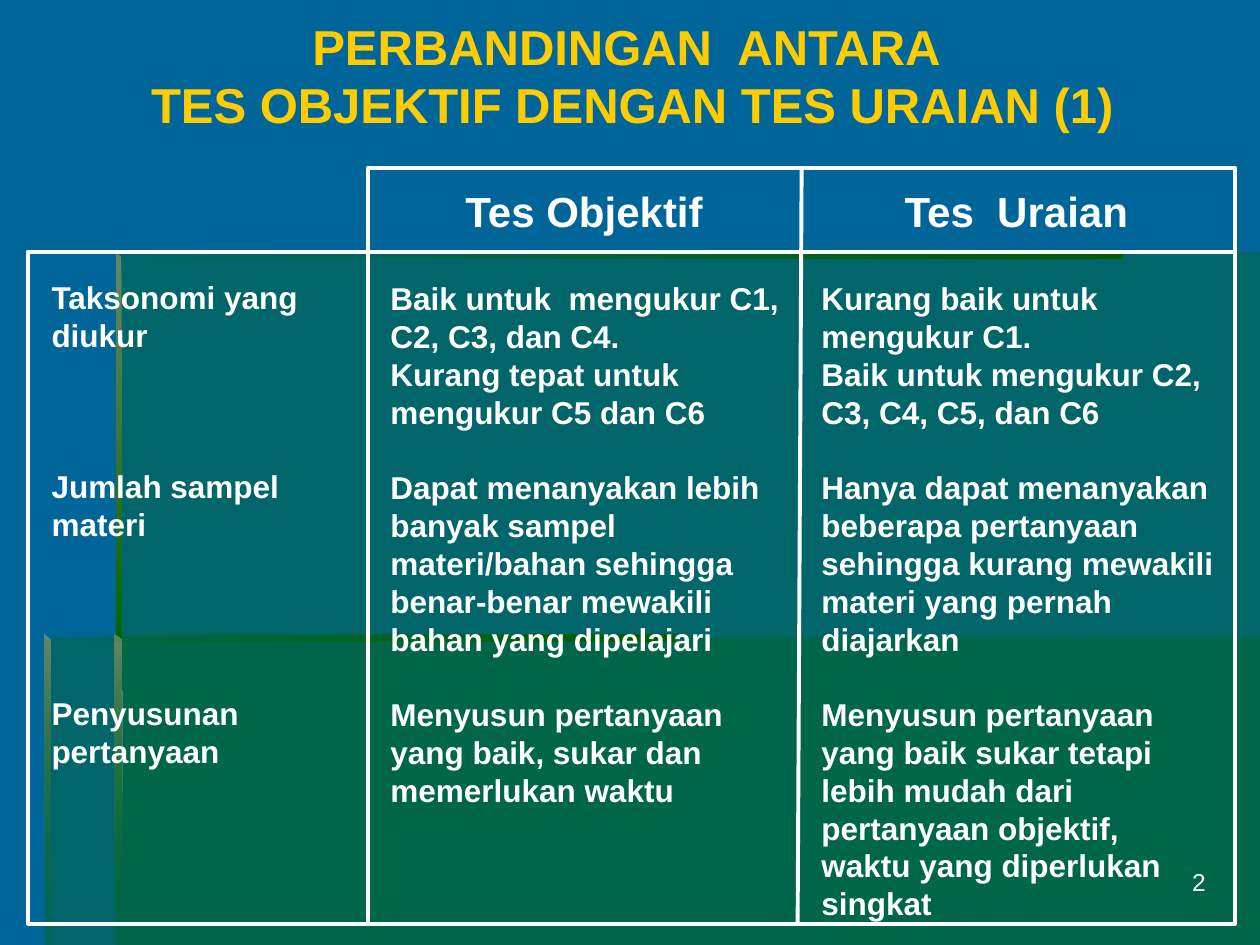
"""Build the slide comparing objective tests with essay tests."""
from dataclasses import dataclass
from typing import Optional

import lxml.etree
import pptx
import pptx.dml.color
import pptx.enum.dml
import pptx.enum.shapes
import pptx.enum.text
import pptx.oxml.ns
import pptx.util
from pptx.util import Cm, Pt

RGBColor = pptx.dml.color.RGBColor
Align = pptx.enum.text.PP_ALIGN
BLUE = RGBColor(0x00, 0x66, 0x99)
GREEN = RGBColor(0x00, 0x66, 0x00)
DARK_GREEN = RGBColor(0x00, 0x5E, 0x00)
GREY_GREEN = RGBColor(0x66, 0x86, 0x66)
YELLOW = RGBColor(0xFF, 0xCC, 0x00)
WHITE = RGBColor(0xFF, 0xFF, 0xFF)
FONT = "Arial"
LINE_FACTOR = 1.2
BORDER = Pt(2.25)
PAGE_RIGHT, PAGE_BOTTOM = 25.4, 19.05
RIGHTWARD, DOWNWARD = 0, 270


@dataclass(frozen=True)
class Tint:
    color: RGBColor
    opacity: int = 100


@dataclass(frozen=True)
class Panel:
    points: list[tuple[float, float]]
    start: Tint
    end: Optional[Tint] = None
    angle: int = RIGHTWARD


@dataclass(frozen=True)
class Frame:
    left: float
    top: float
    width: float
    height: float

    def lengths(self) -> list[pptx.util.Length]:
        return [Cm(value) for value in (self.left, self.top, self.width, self.height)]


@dataclass(frozen=True)
class Entry:
    text: str
    lines_before: int = 0


@dataclass(frozen=True)
class Block:
    frame: Frame
    entries: list[Entry]
    size: int = 18
    align: Align = Align.LEFT
    bold: bool = True
    color: RGBColor = WHITE


PANELS = [
    Panel([(2.34, 12.83), (2.34, PAGE_BOTTOM), (PAGE_RIGHT, PAGE_BOTTOM),
           (PAGE_RIGHT, 12.83)], Tint(GREEN, 30)),
    Panel([(2.39, 12.85), (0.91, 12.85), (0.91, PAGE_BOTTOM), (PAGE_RIGHT, PAGE_BOTTOM),
           (PAGE_RIGHT, 5.08), (2.39, 5.08)], Tint(GREEN, 30)),
    Panel([(2.34, 5.08), (2.34, 5.21), (22.63, 5.21), (22.63, 5.08)],
          Tint(GREEN, 0), Tint(DARK_GREEN)),
    Panel([(2.34, 5.08), (2.34, 12.95), (2.46, 12.95), (2.44, 5.18)],
          Tint(GREY_GREEN), Tint(GREEN), DOWNWARD),
    Panel([(2.31, PAGE_BOTTOM), (2.46, PAGE_BOTTOM), (2.44, 12.9), (2.31, 12.8)],
          Tint(GREY_GREEN), Tint(GREEN, 0), DOWNWARD),
    Panel([(0.89, 12.8), (0.89, 12.93), (13.59, 12.93), (13.59, 12.8)],
          Tint(GREEN, 0), Tint(DARK_GREEN)),
    Panel([(0.89, 12.8), (0.89, PAGE_BOTTOM), (1.02, PAGE_BOTTOM), (1.02, 12.93)],
          Tint(GREY_GREEN), Tint(GREEN, 10), DOWNWARD),
]

TITLE = Block(Frame(0.64, 0.2, 24.21, 2.62),
              [Entry("PERBANDINGAN  ANTARA "), Entry("TES OBJEKTIF DENGAN TES URAIAN (1)")],
              28, Align.CENTER, color=YELLOW)

BLOCKS = [
    Block(Frame(19.28, 17.35, 5.28, 1.32), [Entry("2")], 14, Align.RIGHT, bold=False),
    Block(Frame(7.37, 3.61, 8.81, 1.27), [Entry("Tes Objektif")], 24, Align.CENTER),
    Block(Frame(16.26, 3.61, 8.46, 1.27), [Entry("Tes  Uraian")], 24, Align.CENTER),
    Block(Frame(0.79, 5.49, 6.35, 11.71), [
        Entry("Taksonomi yang diukur"),
        Entry("Jumlah sampel materi", 3),
        Entry("Penyusunan pertanyaan", 4),
    ]),
    Block(Frame(7.62, 5.51, 8.46, 11.71), [
        Entry("Baik untuk  mengukur C1, C2, C3, dan C4."),
        Entry("Kurang tepat untuk mengukur C5 dan C6"),
        Entry("Dapat menanyakan lebih banyak sampel materi/bahan sehingga "
              "benar-benar mewakili bahan yang dipelajari", 1),
        Entry("Menyusun pertanyaan yang baik, sukar dan memerlukan waktu", 1),
    ]),
    Block(Frame(16.31, 5.51, 8.46, 13.23), [
        Entry("Kurang baik untuk mengukur C1."),
        Entry("Baik untuk mengukur C2, C3, C4, C5, dan C6"),
        Entry("Hanya dapat menanyakan beberapa pertanyaan sehingga kurang "
              "mewakili materi yang pernah diajarkan", 1),
        Entry("Menyusun pertanyaan yang baik sukar tetapi lebih mudah dari "
              "pertanyaan objektif, waktu yang diperlukan singkat", 1),
    ]),
]


def draw_panel(page: pptx.slide.Slide, panel: Panel) -> None:
    points = [(Cm(x), Cm(y)) for x, y in panel.points]
    builder = page.shapes.build_freeform(*points[0])
    builder.add_line_segments(points[1:], close=True)
    shape = builder.convert_to_shape()
    shape.shadow.inherit = False
    shape.line.fill.background()
    tints = [panel.start]
    if panel.end is None:
        shape.fill.solid()
        shape.fill.fore_color.rgb = panel.start.color
    else:
        tints.append(panel.end)
        shape.fill.gradient()
        shape.fill.gradient_angle = panel.angle
        for stop, tint in zip(shape.fill.gradient_stops, tints):
            stop.color.rgb = tint.color
    qualify = pptx.oxml.ns.qn
    colors = shape.element.spPr.iter(qualify("a:srgbClr"))
    for color, tint in zip(colors, tints):
        if tint.opacity < 100:
            alpha = lxml.etree.SubElement(color, qualify("a:alpha"))
            alpha.set("val", str(tint.opacity * 1000))


def draw_border(page: pptx.slide.Slide, frame: Frame) -> pptx.shapes.autoshape.Shape:
    shape = page.shapes.add_shape(pptx.enum.shapes.MSO_SHAPE.RECTANGLE, *frame.lengths())
    shape.shadow.inherit = False
    shape.fill.background()
    shape.line.color.rgb = WHITE
    shape.line.width = BORDER
    return shape


def draw_divider(page: pptx.slide.Slide, border: pptx.shapes.autoshape.Shape) -> None:
    divider = page.shapes.add_connector(pptx.enum.shapes.MSO_CONNECTOR.STRAIGHT,
                                        Cm(16.16), Cm(3.38), Cm(16.08), Cm(18.62))
    divider.begin_connect(border, 0)
    divider.line.color.rgb = WHITE
    divider.line.width = BORDER
    lxml.etree.SubElement(divider.element.spPr, pptx.oxml.ns.qn("a:effectLst"))


def write_block(box: pptx.shapes.autoshape.Shape, block: Block) -> None:
    box.left, box.top, box.width, box.height = block.frame.lengths()
    text = box.text_frame
    text.word_wrap = True
    text.auto_size = pptx.enum.text.MSO_AUTO_SIZE.NONE
    text.vertical_anchor = pptx.enum.text.MSO_ANCHOR.TOP
    pitch = block.size * LINE_FACTOR
    for index, entry in enumerate(block.entries):
        para = text.add_paragraph() if index else text.paragraphs[0]
        para.text = entry.text
        para.alignment = block.align
        para.line_spacing = Pt(pitch)
        para.space_before = Pt(pitch * entry.lines_before)
        para.font.name = FONT
        para.font.size = Pt(block.size)
        para.font.bold = block.bold
        para.font.color.rgb = block.color


def main() -> None:
    deck = pptx.Presentation()
    deck.slide_width, deck.slide_height = Cm(PAGE_RIGHT), Cm(PAGE_BOTTOM)
    page = deck.slides.add_slide(deck.slide_layouts[5])
    page.background.fill.solid()
    page.background.fill.fore_color.rgb = BLUE
    for panel in PANELS:
        draw_panel(page, panel)
    write_block(page.shapes.title, TITLE)
    draw_border(page, Frame(0.56, 5.08, 24.33, 13.54))
    draw_divider(page, draw_border(page, Frame(7.42, 3.38, 17.48, 15.24)))
    for block in BLOCKS:
        write_block(page.shapes.add_textbox(*block.frame.lengths()), block)
    deck.save("out.pptx")


if __name__ == "__main__":
    main()
